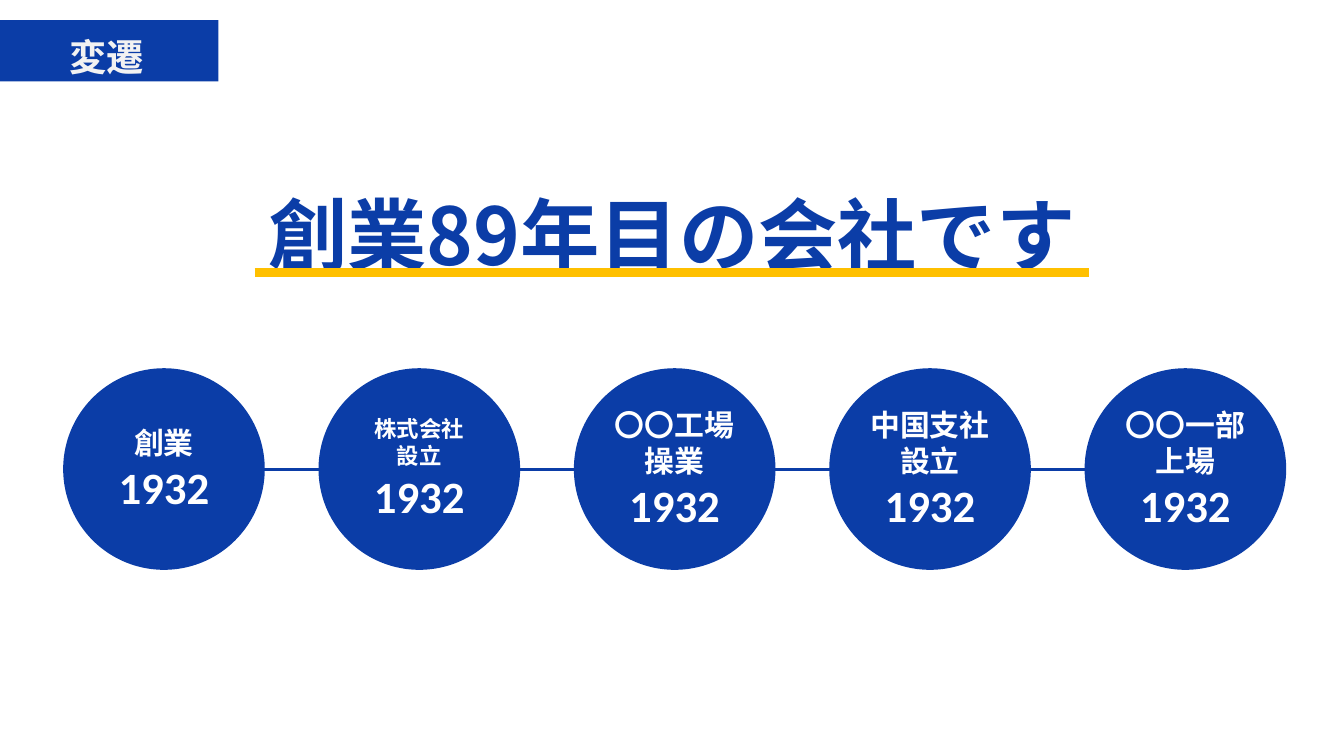
from lxml import etree
from pptx import Presentation
from pptx import util as u
from pptx.dml.color import RGBColor
from pptx.enum import shapes, text
from pptx.oxml import ns

BLUE = RGBColor(0x0B, 0x3D, 0xA7)
YELLOW = RGBColor(0xFF, 0xC0, 0x00)
WHITE = RGBColor(0xFF, 0xFF, 0xFF)
PALE = RGBColor(0xF2, 0xF2, 0xF2)
LATIN_FONT = "Calibri"
JAPANESE_FONT = "Noto Sans CJK JP"

SECTION = "変遷"
HEADLINE = "創業89年目の会社です"
MILESTONES = [
    (["創業"], "1932", 32),
    (["株式会社", "設立"], "1932", 24),
    (["〇〇工場操業"], "1932", 32),
    (["中国支社設立"], "1932", 32),
    (["〇〇一部上場"], "1932", 32),
]
YEAR_SIZE = 48
FIRST_LEFT, CIRCLE_TOP, DIAMETER, PITCH = 0.94, 5.48, 3, 3.8


def add_run(paragraph, content, size, color, font_name):
    run = paragraph.add_run()
    run.text = content
    font = run.font
    font.size, font.bold, font.name = u.Pt(size), True, font_name
    font.color.rgb = color
    latin = run._r.get_or_add_rPr().find(ns.qn("a:latin"))
    east_asian = etree.Element(ns.qn("a:ea"), typeface=JAPANESE_FONT)
    latin.addnext(east_asian)


def add_block(slide, kind, left, top, width, height):
    shape = slide.shapes.add_shape(kind, *map(u.Inches, (left, top, width, height)))
    shape.shadow.inherit = False
    shape.fill.solid()
    shape.fill.fore_color.rgb = BLUE
    shape.line.fill.background()
    return shape


def add_rule(slide, start, end, y, color, width):
    rule = slide.shapes.add_connector(
        shapes.MSO_CONNECTOR.STRAIGHT,
        u.Inches(start), u.Inches(y), u.Inches(end), u.Inches(y))
    rule.line.color.rgb = color
    rule.line.width = u.Pt(width)
    etree.SubElement(rule._element.spPr, ns.qn("a:effectLst"))


def fill_heading(shape, content, size, color):
    frame = shape.text_frame
    frame.word_wrap = True
    frame.auto_size = text.MSO_AUTO_SIZE.SHAPE_TO_FIT_TEXT
    frame.vertical_anchor = text.MSO_ANCHOR.MIDDLE
    frame.margin_left = frame.margin_right = u.Inches(0.1)
    frame.margin_top, frame.margin_bottom = u.Inches(0.3), u.Inches(0.05)
    paragraph = frame.paragraphs[0]
    paragraph.alignment = text.PP_ALIGN.CENTER
    add_run(paragraph, content, size, color, JAPANESE_FONT)


def add_milestone(slide, left, labels, year, size):
    circle = add_block(slide, shapes.MSO_SHAPE.OVAL, left, CIRCLE_TOP, DIAMETER, DIAMETER)
    frame = circle.text_frame
    frame.word_wrap = True
    frame.vertical_anchor = text.MSO_ANCHOR.MIDDLE
    for index, label in enumerate(labels):
        paragraph = frame.paragraphs[0] if index == 0 else frame.add_paragraph()
        paragraph.alignment = text.PP_ALIGN.CENTER
        add_run(paragraph, label, size, WHITE, LATIN_FONT)
    paragraph.add_line_break()
    add_run(paragraph, year, YEAR_SIZE, WHITE, LATIN_FONT)


def main():
    presentation = Presentation()
    presentation.slide_width = u.Inches(20)
    presentation.slide_height = u.Inches(11.25)
    slide = presentation.slides.add_slide(presentation.slide_layouts[5])

    title = slide.shapes.title
    title.left, title.top, title.width, title.height = map(u.Inches, (2.36, 2.46, 15.28, 1.78))
    fill_heading(title, HEADLINE, 85, BLUE)

    add_rule(slide, 2.51, 16.37, CIRCLE_TOP + DIAMETER / 2, BLUE, 3.25)
    for index, (labels, year, size) in enumerate(MILESTONES):
        add_milestone(slide, FIRST_LEFT + index * PITCH, labels, year, size)

    add_block(slide, shapes.MSO_SHAPE.RECTANGLE, -0.07, 0.3, 3.32, 0.91)
    section = slide.shapes.add_textbox(*map(u.Inches, (-0.08, 0.21, 3.33, 1.02)))
    fill_heading(section, SECTION, 40, PALE)
    add_rule(slide, 3.79, 16.21, 4.06, YELLOW, 9.5)

    presentation.save("out.pptx")


if __name__ == "__main__":
    main()
